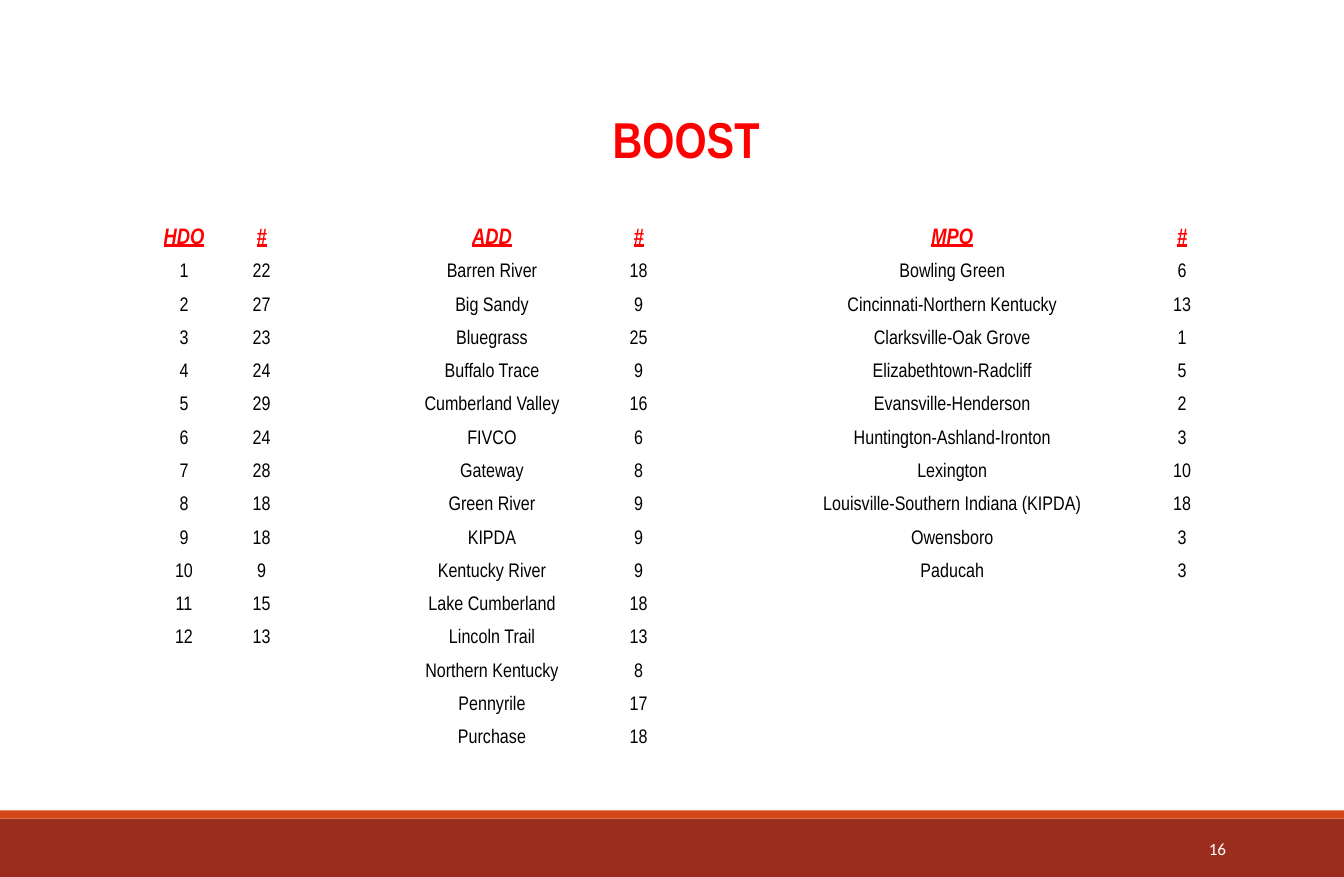
from lxml import etree
from pptx import Presentation
from pptx.dml.color import RGBColor
from pptx.enum import shapes, text
from pptx.oxml import ns
from pptx.util import Inches, Pt

RED = RGBColor(0xFF, 0x00, 0x00)
BLACK = RGBColor(0x00, 0x00, 0x00)
WHITE = RGBColor(0xFF, 0xFF, 0xFF)
BRICK = RGBColor(0x9B, 0x2D, 0x1F)
ORANGE = RGBColor(0xD3, 0x48, 0x17)

COLUMN_WIDTHS = [0.71, 0.83, 0.83, 2.08, 0.83, 0.83, 3.73, 0.83]
ROW_HEIGHTS = [0.81, 0.27, 0.52] + [0.33] * 15
HEADER_ROW = 2

HDO = list(enumerate([22, 27, 23, 24, 29, 24, 28, 18, 18, 9, 15, 13], 1))
ADD = [
    ("Barren River", 18), ("Big Sandy", 9), ("Bluegrass", 25),
    ("Buffalo Trace", 9), ("Cumberland Valley", 16), ("FIVCO", 6),
    ("Gateway", 8), ("Green River", 9), ("KIPDA", 9),
    ("Kentucky River", 9), ("Lake Cumberland", 18), ("Lincoln Trail", 13),
    ("Northern Kentucky", 8), ("Pennyrile", 17), ("Purchase", 18),
]
MPO = [
    ("Bowling Green", 6), ("Cincinnati-Northern Kentucky", 13),
    ("Clarksville-Oak Grove", 1), ("Elizabethtown-Radcliff", 5),
    ("Evansville-Henderson", 2), ("Huntington-Ashland-Ironton", 3),
    ("Lexington", 10), ("Louisville-Southern Indiana (KIPDA)", 18),
    ("Owensboro", 3), ("Paducah", 3),
]
GROUPS = [(0, "HDO", HDO), (3, "ADD", ADD), (6, "MPO", MPO)]


def write(frame, words, size=14, color=BLACK, font="Arial Narrow",
          align=text.PP_ALIGN.CENTER, bold=False, accent=False):
    para = frame.paragraphs[0]
    para.alignment = align
    span = para.add_run()
    span.text = str(words)
    span.font.name = font
    span.font.size = Pt(size)
    span.font.color.rgb = color
    span.font.bold = bold
    span.font.italic = accent
    span.font.underline = accent


deck = Presentation()
deck.slide_width = Inches(13.33)
deck.slide_height = Inches(8.7)
page = deck.slides.add_slide(deck.slide_layouts[6])

for top, height, color in [(8.12, 0.58, BRICK), (8.04, 0.08, ORANGE)]:
    bar = page.shapes.add_shape(shapes.MSO_SHAPE.RECTANGLE, 0, Inches(top),
                                deck.slide_width, Inches(height))
    bar.shadow.inherit = False
    bar.fill.solid()
    bar.fill.fore_color.rgb = color
    bar.line.fill.background()

number_box = page.shapes.add_textbox(Inches(10.83), Inches(8.19),
                                     Inches(1.43), Inches(0.46))
number_box.text_frame.word_wrap = True
number_box.text_frame.vertical_anchor = text.MSO_ANCHOR.MIDDLE
write(number_box.text_frame, "16", size=12.2, color=WHITE, font="Calibri",
      align=text.PP_ALIGN.RIGHT)

table = page.shapes.add_table(len(ROW_HEIGHTS), len(COLUMN_WIDTHS),
                              Inches(1.47), Inches(0.87),
                              Inches(10.65), Inches(6.57)).table
table.first_row = False
table.horz_banding = False
for column, width in zip(table.columns, COLUMN_WIDTHS):
    column.width = Inches(width)
for row, height in zip(table.rows, ROW_HEIGHTS):
    row.height = Inches(height)

for cell in table.iter_cells():
    cell.fill.background()
    cell.vertical_anchor = text.MSO_ANCHOR.BOTTOM
    cell.margin_left = cell.margin_right = cell.margin_top = Inches(0.01)
    cell.margin_bottom = 0
    para = cell.text_frame.paragraphs[0]
    etree.SubElement(para._p, ns.qn("a:endParaRPr"), sz="1400")

title = table.cell(0, 0)
title.merge(table.cell(0, len(COLUMN_WIDTHS) - 1))
write(title.text_frame, "BOOST", size=36, color=RED, bold=True)

for left, heading, entries in GROUPS:
    for offset, label in enumerate([heading, "#"]):
        write(table.cell(HEADER_ROW, left + offset).text_frame, label,
              size=16, color=RED, bold=True, accent=True)
    for row, entry in enumerate(entries, HEADER_ROW + 1):
        for offset, value in enumerate(entry):
            write(table.cell(row, left + offset).text_frame, value)

deck.save("out.pptx")
